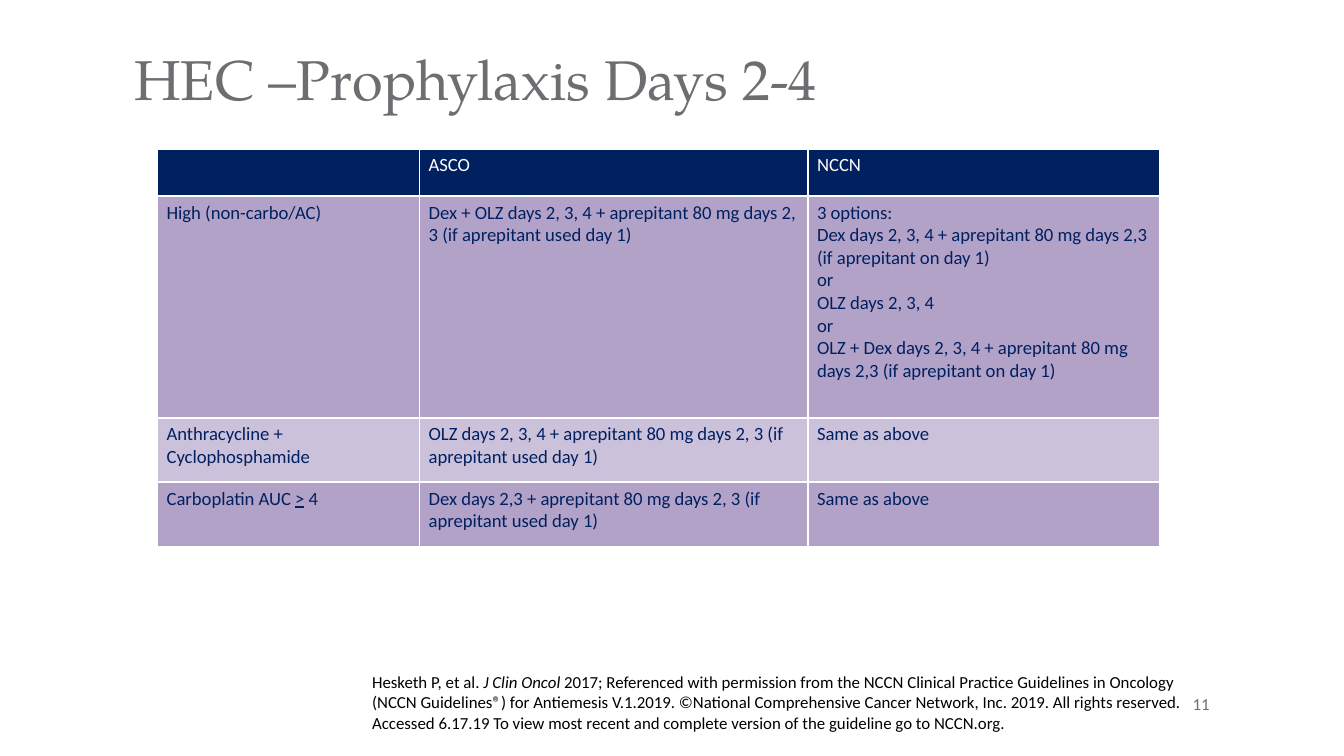
from dataclasses import dataclass

from lxml.etree import SubElement
from pptx import Presentation
from pptx.dml.color import RGBColor
from pptx.enum.text import MSO_ANCHOR, PP_ALIGN
from pptx.oxml.ns import qn
from pptx.util import Emu, Inches, Pt

COLORS = {"navy": "002060", "mauve": "B3A2C7", "lilac": "CCC1DA",
          "white": "FFFFFF", "gray": "6D6E71", "black": "000000"}
BODY, HEADING = "Calibri", "TeX Gyre Pagella"
CELL_SIZE = 10

prs = Presentation()
prs.slide_width = Inches(10)
prs.slide_height = Emu(prs.slide_width * 9 // 16)  # widescreen
s = prs.slides.add_slide(prs.slide_layouts[6])


@dataclass
class Span:
    text: str
    italic: bool = False
    underline: bool = False


@dataclass
class Label:
    spans: list[Span]
    box: tuple[float, float, float, float]  # percent of slide width and height
    size: float
    color: str
    font: str = BODY
    margins: tuple[float, float] = (0, 0)  # inches: sides, top and bottom
    align: PP_ALIGN = PP_ALIGN.LEFT
    anchor: MSO_ANCHOR = MSO_ANCHOR.TOP


def rgb(name: str) -> RGBColor:
    return RGBColor.from_string(COLORS[name])


def share(x: float, y: float) -> tuple[Emu, Emu]:
    return Emu(int(prs.slide_width * x / 100)), Emu(int(prs.slide_height * y / 100))


def write(p, spans: list[Span], size: float, color: str, font: str = BODY) -> None:
    for span in spans:
        r = p.add_run()
        r.text = span.text
        r.font.size, r.font.name = Pt(size), font
        r.font.color.rgb = rgb(color)
        if span.italic:
            r.font.italic = True
        if span.underline:
            r.font.underline = True


def draw_label(label: Label) -> None:
    x, y, w, h = label.box
    tf = s.shapes.add_textbox(*share(x, y), *share(w, h)).text_frame
    tf.word_wrap = True
    tf.vertical_anchor = label.anchor
    tf.margin_left = tf.margin_right = Inches(label.margins[0])
    tf.margin_top = tf.margin_bottom = Inches(label.margins[1])
    p = tf.paragraphs[0]
    p.alignment = label.align
    write(p, label.spans, label.size, label.color, label.font)


def add_borders(cell) -> None:
    """Put white borders on a cell, ahead of its fill as the schema asks."""
    tc_pr = cell._tc.get_or_add_tcPr()
    for i, side in enumerate("LRTB"):
        ln = SubElement(tc_pr, qn(f"a:ln{side}"), w=str(Pt(1)))
        fill = SubElement(ln, qn("a:solidFill"))
        SubElement(fill, qn("a:srgbClr"), val=COLORS["white"])
        tc_pr.insert(i, ln)


def draw_cell(cell, paragraphs: list[list[Span]], fill: str, color: str) -> None:
    cell.fill.solid()
    cell.fill.fore_color.rgb = rgb(fill)
    cell.margin_left = cell.margin_right = Inches(0.07)
    cell.margin_top = cell.margin_bottom = Inches(0.04)
    add_borders(cell)
    tf = cell.text_frame
    for i, spans in enumerate(paragraphs):
        p = tf.add_paragraph() if i else tf.paragraphs[0]
        write(p, spans, CELL_SIZE, color)
    if not paragraphs:  # keeps the blank cell from stretching its row
        SubElement(tf.paragraphs[0]._p, qn("a:endParaRPr"), sz=str(CELL_SIZE * 100))


def lines(*texts: str) -> list[list[Span]]:
    return [[Span(text)] for text in texts]


# Title
draw_label(Label([Span("HEC –Prophylaxis Days 2-4")], (10, 5.9, 80, 8.9),
                 30, "gray", HEADING))

# Table of regimens by emetic risk
APREPITANT = "aprepitant 80 mg days 2, 3 (if aprepitant used day 1)"
ROWS = [
    [[], lines("ASCO"), lines("NCCN")],
    [lines("High (non-carbo/AC)"),
     lines(f"Dex + OLZ days 2, 3, 4 + {APREPITANT}"),
     lines("3 options:",
           "Dex days 2, 3, 4 + aprepitant 80 mg days 2,3 (if aprepitant on day 1)",
           "or",
           "OLZ days 2, 3, 4",
           "or",
           "OLZ + Dex days 2, 3, 4 + aprepitant 80 mg days 2,3 "
           "(if aprepitant on day 1)")],
    [lines("Anthracycline + Cyclophosphamide"),
     lines(f"OLZ days 2, 3, 4 + {APREPITANT}"), lines("Same as above")],
    [[[Span("Carboplatin AUC "), Span(">", underline=True), Span(" 4")]],
     lines(f"Dex days 2,3 + {APREPITANT}"), lines("Same as above")],
]
COLUMN_WIDTHS = [1.95, 2.89, 2.62]
ROW_HEIGHTS = [0.35, 1.65, 0.48, 0.48]

table = s.shapes.add_table(len(ROWS), len(COLUMN_WIDTHS), *share(11.7, 19.7),
                           Inches(sum(COLUMN_WIDTHS)), Inches(sum(ROW_HEIGHTS))).table
for column, width in zip(table.columns, COLUMN_WIDTHS):
    column.width = Inches(width)
for i, (height, row) in enumerate(zip(ROW_HEIGHTS, ROWS)):
    table.rows[i].height = Inches(height)
    band = "mauve" if i % 2 else "lilac"
    fill, color = (band, "navy") if i else ("navy", "white")
    for j, paragraphs in enumerate(row):
        draw_cell(table.cell(i, j), paragraphs, fill, color)

# Page number
draw_label(Label([Span("11")], (66.7, 89.1, 23.3, 5.4), 9, "gray",
                 align=PP_ALIGN.RIGHT, anchor=MSO_ANCHOR.BOTTOM))

# Citation
draw_label(Label(
    [Span("Hesketh P, et al. "), Span("J Clin Oncol", italic=True),
     Span(" 2017; Referenced with permission from the NCCN Clinical Practice "
          "Guidelines in Oncology (NCCN Guidelines®) for Antiemesis V.1.2019. "
          "©National Comprehensive Cancer Network, Inc. 2019. All rights reserved. "
          "Accessed 6.17.19 To view most recent and complete version of the "
          "guideline go to NCCN.org.")],
    (26.7, 88, 62.5, 10), 9, "black", margins=(0.1, 0.05)))

prs.save("out.pptx")
